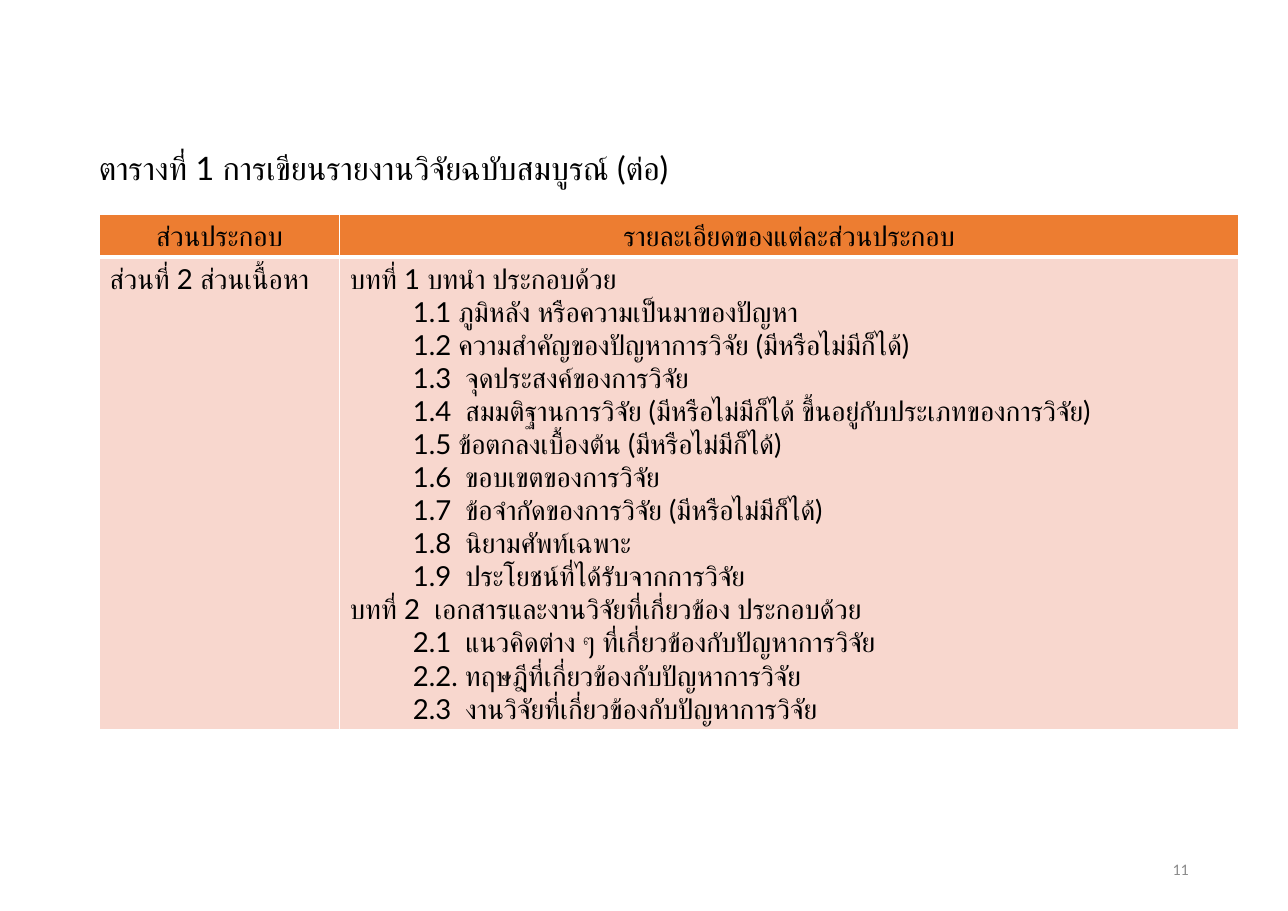
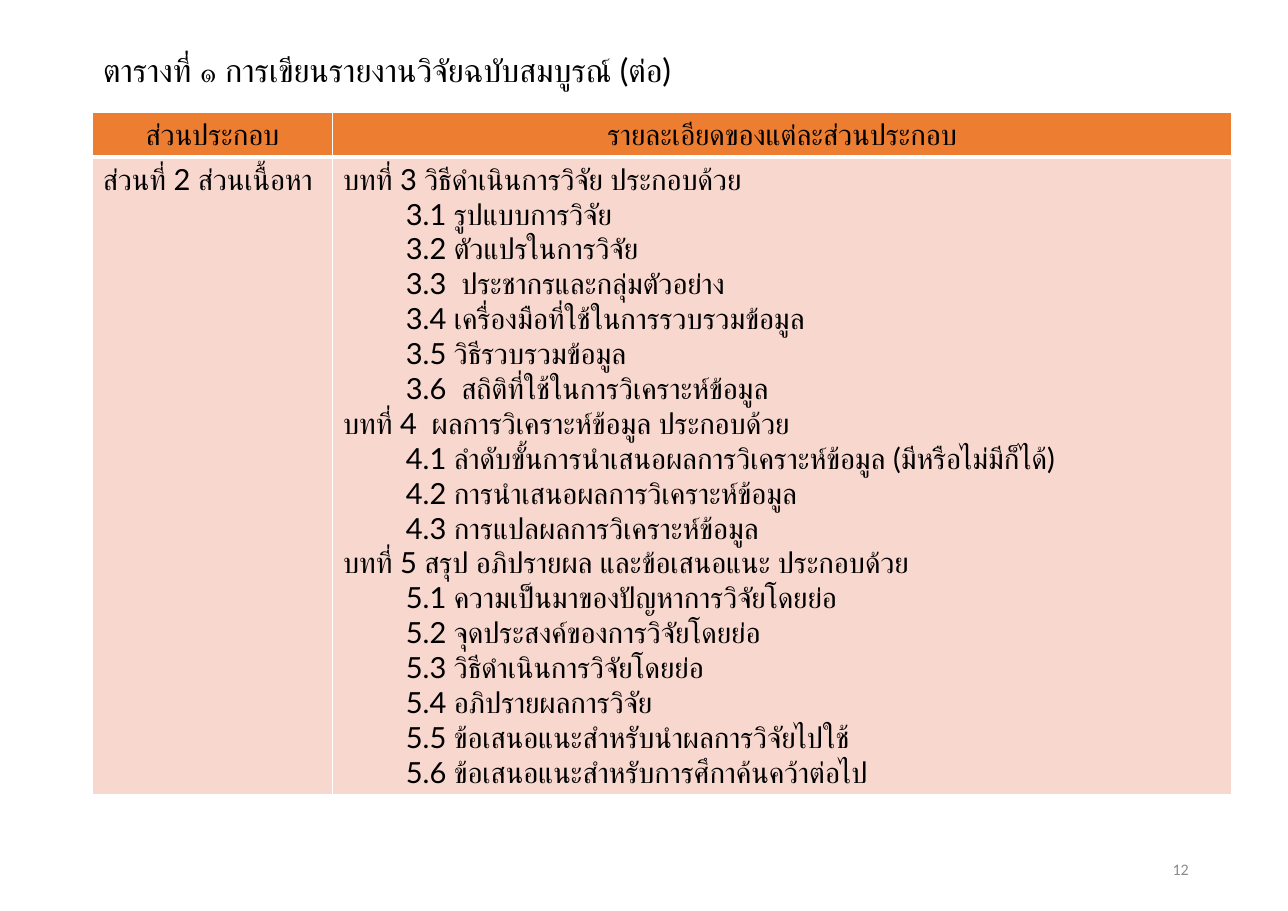
from lxml import etree
from pptx import Presentation
from pptx import util as u
from pptx.dml.color import RGBColor
from pptx.enum import text
from pptx.oxml import ns

COLORS = {"ink": "000000", "header": "ED7D31", "body": "F8D7CE",
          "rule": "FFFFFF", "number": "8C8C8C"}
FONT, NUMBER_FONT = "Lato", "Calibri"
CENTER, LEFT, RIGHT = text.PP_ALIGN.CENTER, text.PP_ALIGN.LEFT, text.PP_ALIGN.RIGHT

# Shared measures in centimetres
COLUMNS = (5.54, 20.73)
HEADER_HEIGHT = 0.97
ITEM_INDENT = 1.45
TITLE_SIZE = (25.63, 1.75)
NUMBER_BOX = (20.98, 19.48, 6.68, 1.12)

HEADINGS = ("ส่วนประกอบ", "รายละเอียดของแต่ละส่วนประกอบ")
PART = "ส่วนที่ 2 ส่วนเนื้อหา"

SLIDES = [
    {
        "title": "ตารางที่ 1 การเขียนรายงานวิจัยฉบับสมบูรณ์ (ต่อ)",
        "title_at": (2.03, 3.05), "table_at": (2.29, 4.95),
        "body_height": 10.62, "size": 18, "number": "11",
        "chapters": [
            ("บทที่ 1 บทนำ ประกอบด้วย", [
                "1.1 ภูมิหลัง หรือความเป็นมาของปัญหา",
                "1.2 ความสำคัญของปัญหาการวิจัย (มีหรือไม่มีก็ได้)",
                "1.3  จุดประสงค์ของการวิจัย",
                "1.4  สมมติฐานการวิจัย (มีหรือไม่มีก็ได้ ขึ้นอยู่กับประเภทของการวิจัย)",
                "1.5 ข้อตกลงเบื้องต้น (มีหรือไม่มีก็ได้)",
                "1.6  ขอบเขตของการวิจัย",
                "1.7  ข้อจำกัดของการวิจัย (มีหรือไม่มีก็ได้)",
                "1.8  นิยามศัพท์เฉพาะ",
                "1.9  ประโยชน์ที่ได้รับจากการวิจัย"]),
            ("บทที่ 2  เอกสารและงานวิจัยที่เกี่ยวข้อง ประกอบด้วย", [
                "2.1  แนวคิดต่าง ๆ ที่เกี่ยวข้องกับปัญหาการวิจัย",
                "2.2. ทฤษฎีที่เกี่ยวข้องกับปัญหาการวิจัย",
                "2.3  งานวิจัยที่เกี่ยวข้องกับปัญหาการวิจัย"]),
        ],
    },
    {
        "title": "ตารางที่ ๑ การเขียนรายงานวิจัยฉบับสมบูรณ์ (ต่อ)",
        "title_at": (2.13, 0.79), "table_at": (2.13, 2.59),
        "body_height": 13.59, "size": 19, "number": "12",
        "chapters": [
            ("บทที่ 3 วิธีดำเนินการวิจัย ประกอบด้วย", [
                "3.1 รูปแบบการวิจัย",
                "3.2 ตัวแปรในการวิจัย",
                "3.3  ประชากรและกลุ่มตัวอย่าง",
                "3.4 เครื่องมือที่ใช้ในการรวบรวมข้อมูล",
                "3.5 วิธีรวบรวมข้อมูล",
                "3.6  สถิติที่ใช้ในการวิเคราะห์ข้อมูล"]),
            ("บทที่ 4  ผลการวิเคราะห์ข้อมูล ประกอบด้วย", [
                "4.1 ลำดับขั้นการนำเสนอผลการวิเคราะห์ข้อมูล (มีหรือไม่มีก็ได้)",
                "4.2 การนำเสนอผลการวิเคราะห์ข้อมูล",
                "4.3 การแปลผลการวิเคราะห์ข้อมูล"]),
            ("บทที่ 5 สรุป อภิปรายผล และข้อเสนอแนะ ประกอบด้วย", [
                "5.1 ความเป็นมาของปัญหาการวิจัยโดยย่อ",
                "5.2 จุดประสงค์ของการวิจัยโดยย่อ",
                "5.3 วิธีดำเนินการวิจัยโดยย่อ",
                "5.4 อภิปรายผลการวิจัย",
                "5.5 ข้อเสนอแนะสำหรับนำผลการวิจัยไปใช้",
                "5.6 ข้อเสนอแนะสำหรับการศึกาค้นคว้าต่อไป"]),
        ],
    },
]


def write(paragraph, words, size, font=FONT, color="ink", align=LEFT,
          spacing=1.0, indent=0):
    """Put formatted text into a paragraph; indent shifts its first line."""
    paragraph.alignment = align
    paragraph.line_spacing = spacing
    if indent:
        properties = paragraph._p.get_or_add_pPr()
        properties.set("marL", "0")
        properties.set("indent", str(u.Cm(indent)))
    run = paragraph.add_run()
    run.text = words
    run.font.size = u.Pt(size)
    run.font.bold = False
    run.font.name = font
    run.font.color.rgb = RGBColor.from_string(COLORS[color])
    # Thai letters take the complex-script typeface
    etree.SubElement(run._r.get_or_add_rPr(), ns.qn("a:cs"), typeface=font)


def add_text_box(slide, box, words, size, **style):
    shape = slide.shapes.add_textbox(*map(u.Cm, box))
    frame = shape.text_frame
    frame.word_wrap = True
    frame.vertical_anchor = text.MSO_ANCHOR.MIDDLE
    write(frame.paragraphs[0], words, size, **style)


def style_cell(cell, fill, bottom=1):
    """Fill a cell and rule its four sides, widths in points."""
    cell.margin_left = cell.margin_right = u.Cm(0.24)
    cell.margin_top = cell.margin_bottom = u.Cm(0.11)
    cell.fill.solid()
    cell.fill.fore_color.rgb = RGBColor.from_string(COLORS[fill])
    properties = cell._tc.get_or_add_tcPr()
    for index, (side, width) in enumerate(zip("LRTB", (1, 1, 1, bottom))):
        line = etree.Element(ns.qn(f"a:ln{side}"), w=str(u.Pt(width)))
        solid = etree.SubElement(line, ns.qn("a:solidFill"))
        etree.SubElement(solid, ns.qn("a:srgbClr"), val=COLORS["rule"])
        properties.insert(index, line)


def add_report_table(slide, left, top, body_height, size, chapters):
    heights = (HEADER_HEIGHT, body_height)
    box = (left, top, sum(COLUMNS), sum(heights))
    table = slide.shapes.add_table(2, 2, *map(u.Cm, box)).table
    table.first_row = table.horz_banding = False
    for column, width in zip(table.columns, COLUMNS):
        column.width = u.Cm(width)
    for row, height in zip(table.rows, heights):
        row.height = u.Cm(height)

    # Header row
    for index, heading in enumerate(HEADINGS):
        cell = table.cell(0, index)
        style_cell(cell, "header", bottom=3)
        write(cell.text_frame.paragraphs[0], heading, size, align=CENTER)

    # Body row: the part's name, then chapters with indented items
    lines = []
    for chapter, items in chapters:
        lines.append((chapter, 0))
        lines += [(item, ITEM_INDENT) for item in items]
    for index, cell_lines in enumerate(([(PART, 0)], lines)):
        cell = table.cell(1, index)
        style_cell(cell, "body")
        frame = cell.text_frame
        for number, (words, indent) in enumerate(cell_lines):
            paragraph = frame.add_paragraph() if number else frame.paragraphs[0]
            write(paragraph, words, size, indent=indent)


def add_report_slide(presentation, content):
    slide = presentation.slides.add_slide(presentation.slide_layouts[6])
    add_text_box(slide, content["title_at"] + TITLE_SIZE, content["title"],
                 21.1, spacing=0.9)
    add_report_table(slide, *content["table_at"], content["body_height"],
                     content["size"], content["chapters"])
    add_text_box(slide, NUMBER_BOX, content["number"], 10.5,
                 font=NUMBER_FONT, color="number", align=RIGHT)


def main():
    presentation = Presentation()
    presentation.slide_width = u.Cm(29.7)
    presentation.slide_height = u.Cm(21)
    for content in SLIDES:
        add_report_slide(presentation, content)
    presentation.save("out.pptx")


if __name__ == "__main__":
    main()
